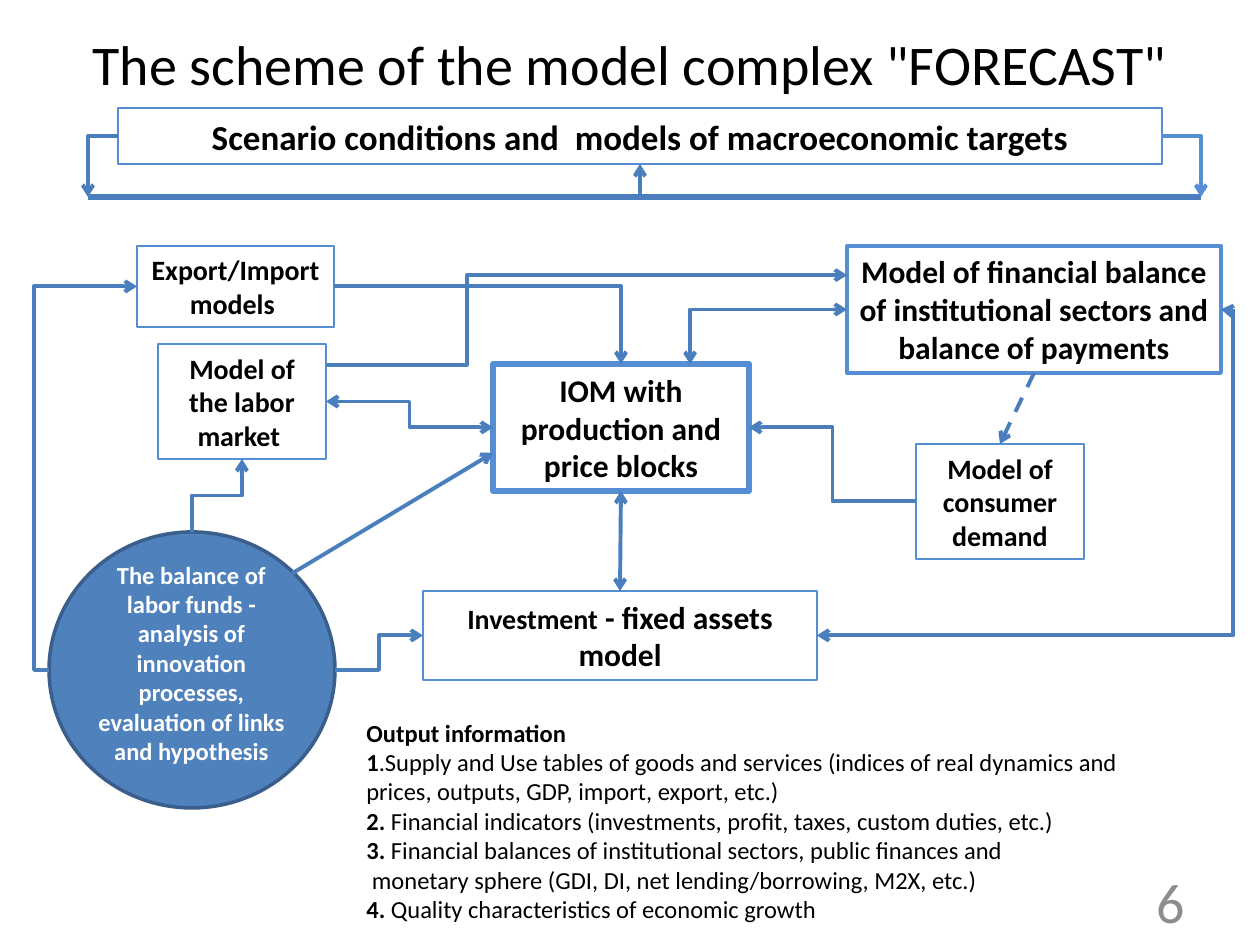
from dataclasses import dataclass

from lxml import etree
from pptx import Presentation
from pptx.dml.color import RGBColor
from pptx.enum.dml import MSO_LINE
from pptx.enum.shapes import MSO_CONNECTOR, MSO_SHAPE
from pptx.enum.text import MSO_ANCHOR, PP_ALIGN
from pptx.oxml.ns import qn
from pptx.util import Emu, Pt

PX = 914400 / 126
STRAIGHT, ELBOW = MSO_CONNECTOR.STRAIGHT, MSO_CONNECTOR.ELBOW
RECT, OVAL = MSO_SHAPE.RECTANGLE, MSO_SHAPE.OVAL
TOP, MIDDLE = MSO_ANCHOR.TOP, MSO_ANCHOR.MIDDLE
LEFT, CENTER, RIGHT = PP_ALIGN.LEFT, PP_ALIGN.CENTER, PP_ALIGN.RIGHT
DASH = MSO_LINE.DASH


@dataclass(frozen=True)
class Theme:
    font: str = "Calibri"
    ink: str = "000000"
    light: str = "FFFFFF"
    frame: str = "558ED5"
    link: str = "4B7EBC"
    hub: str = "4F81BD"
    hub_edge: str = "3A5F8C"
    muted: str = "8C8C8C"
    title: int = 32
    banner: int = 20
    core: int = 18
    node: int = 16
    note: int = 14


THEME = Theme()


def px(value):
    return Emu(round(value * PX))


def within(region, box):
    """Turn a box relative to its region into slide px."""
    return region[0] + box[0], region[1] + box[1], box[2], box[3]


def write(shape, paragraphs, size, color=THEME.ink, align=CENTER, anchor=MIDDLE):
    """Each paragraph is a list of (text, bold, size or None) runs."""
    frame = shape.text_frame
    for name, value in {"word_wrap": True, "vertical_anchor": anchor}.items():
        setattr(frame, name, value)
    for index, runs in enumerate(paragraphs):
        paragraph = frame.add_paragraph() if index else frame.paragraphs[0]
        paragraph.alignment = align
        for text, bold, own_size in runs:
            run = paragraph.add_run()
            run.text = text
            look = {"name": THEME.font, "size": Pt(own_size or size), "bold": bold}
            for name, value in look.items():
                setattr(run.font, name, value)
            run.font.color.rgb = RGBColor.from_string(color)


def add_text(slide, box, paragraphs, size, **look):
    write(slide.shapes.add_textbox(*map(px, box)), paragraphs, size, **look)


def add_block(slide, box, edge, width, kind=RECT, fill=None):
    block = slide.shapes.add_shape(kind, *map(px, box))
    block.shadow.inherit = False
    if fill:
        block.fill.solid()
        block.fill.fore_color.rgb = RGBColor.from_string(fill)
    else:
        block.fill.background()
    block.line.color.rgb = RGBColor.from_string(edge)
    block.line.width = Pt(width)
    return block


def add_link(slide, start, end, route="straight", bend=None, ends="tail",
             color=THEME.link, width=2.25, dash=None):
    """Routes: straight, corner (across, down), step (across, down, across), rise."""
    (x1, y1), (x2, y2) = start, end
    if route == "rise":  # a step turned a quarter to the left
        cx, cy, half_w, half_h = (x1 + x2) / 2, (y1 + y2) / 2, (y1 - y2) / 2, (x2 - x1) / 2
        x1, y1, x2, y2 = cx - half_w, cy - half_h, cx + half_w, cy + half_h
    kind = STRAIGHT if route == "straight" else ELBOW
    link = slide.shapes.add_connector(kind, *map(px, (x1, y1, x2, y2)))
    properties = link._element.spPr
    if route == "rise":
        properties.find(qn("a:xfrm")).set("rot", str(270 * 60000))
    geometry = properties.find(qn("a:prstGeom"))
    if route == "corner":
        geometry.set("prst", "bentConnector2")
    if bend is not None:
        guides = geometry.find(qn("a:avLst"))
        if guides is None:
            guides = etree.SubElement(geometry, qn("a:avLst"))
        etree.SubElement(guides, qn("a:gd"), name="adj1", fmla=f"val {round(bend * 100000)}")
    link.line.color.rgb = RGBColor.from_string(color)
    link.line.width = Pt(width)
    if dash:
        link.line.dash_style = dash
    outline = properties.find(qn("a:ln"))
    for tag in ("head", "tail"):
        if tag in ends:
            etree.SubElement(outline, qn(f"a:{tag}End"), type="arrow")
    etree.SubElement(properties, qn("a:effectLst"))


def build_targets(slide, region):
    """Banner of targets with the return line below it."""
    x, y, width, height = region
    bar_left, bar_right, bar_height = x + 30, x + width - 39, 56
    bar = add_block(slide, (bar_left, y, bar_right - bar_left, bar_height), THEME.frame, 1.5)
    write(bar, [[("Scenario conditions and  models of macroeconomic targets", True, None)]],
          THEME.banner)
    base, middle = y + height, y + bar_height / 2
    add_link(slide, (x, base), (x + width, base), ends="", width=3)
    add_link(slide, (bar_left, middle), (x, base), "corner")
    add_link(slide, (bar_right, middle), (x + width, base), "corner", color=THEME.frame)
    add_link(slide, (x + 552, base), (x + 552, y + bar_height))


def build_models(slide, region):
    """Models, the labor balance hub and the links between them."""
    boxes = {
        "hub": (15, 286, 286, 276),
        "trade": (103, 0, 197, 81),
        "labor": (124, 98, 168, 115),
        "finance": (813, 0, 374, 127),
        "consumer": (882, 198, 168, 115),
        "iom": (459, 118, 256, 127),
        "invest": (389, 345, 394, 89),
    }
    boxes = {name: within(region, box) for name, box in boxes.items()}

    # Hub
    add_block(slide, boxes["hub"], THEME.hub_edge, 2, OVAL, THEME.hub)
    add_text(slide, within(region, (44, 306, 227, 221)),
             [[("The balance of labor funds - analysis of innovation processes, "
                "evaluation of links and hypothesis", True, None)]],
             THEME.note, color=THEME.light)

    # Models: name, line width, type size, anchor, runs
    models = [
        ("trade", 1.5, THEME.node, MIDDLE, [("Export/Import models ", True, None)]),
        ("labor", 1.5, THEME.node, MIDDLE, [("Model of the labor market ", True, None)]),
        ("finance", 2.25, THEME.core, TOP,
         [("Model of financial balance of institutional sectors and balance of payments",
           True, None)]),
        ("consumer", 1.5, THEME.node, MIDDLE, [("Model of consumer demand", True, None)]),
        ("iom", 3, THEME.core, MIDDLE, [("IOM with production and price blocks", True, None)]),
        ("invest", 1.5, THEME.core, MIDDLE,
         [("Investment", True, THEME.node), (" - fixed assets model", True, None)]),
    ]
    for name, width, size, anchor, runs in models:
        block = add_block(slide, boxes[name], THEME.frame, width)
        write(block, [runs], size, anchor=anchor)

    # Links: each end is a model and a share of its width and height
    def spot(name, across, down):
        x, y, width, height = boxes[name]
        return x + across * width, y + down * height

    both = "head tail"
    links = [
        (("hub", 0, 0.5), ("trade", 0, 0.5), {"route": "step", "bend": -0.17}),
        (("trade", 1, 0.5), ("iom", 0.5, 0), {"route": "corner"}),
        (("hub", 0.5, 0), ("labor", 0.5, 1), {"route": "rise"}),
        (("labor", 1, 0.5), ("iom", 0, 0.5), {"route": "step", "ends": both}),
        (("hub", 1, 0.5), ("invest", 0, 0.5), {"route": "step"}),
        (("consumer", 0, 0.5), ("iom", 1, 0.5), {"route": "step"}),
        (("labor", 1, 0.18), ("finance", 0, 0.23), {"route": "step", "bend": 0.27}),
        (("hub", 0.85, 0.15), ("iom", 0, 0.7), {}),
        (("iom", 0.5, 1), ("invest", 0.5, 0), {"ends": both}),
        (("invest", 1, 0.5), ("finance", 1, 0.5),
         {"route": "step", "bend": 1.03, "ends": both}),
        (("finance", 0.5, 1), ("consumer", 0.5, 0), {"dash": DASH}),
        (("finance", 0, 0.5), ("iom", 0.77, 0), {"route": "corner", "ends": both}),
    ]
    for start, end, look in links:
        add_link(slide, spot(*start), spot(*end), **look)


def build_output(slide, region):
    """List of what the models give out."""
    items = [
        ("Output information", ""),
        ("1", ".Supply and Use tables of goods and services (indices of real dynamics and "
              "prices, outputs, GDP, import, export, etc.)"),
        ("2.", " Financial indicators (investments, profit, taxes, custom duties, etc.)"),
        ("3.", " Financial balances of institutional sectors, public finances and"),
        ("", " monetary sphere (GDI, DI, net lending/borrowing, M2X, etc.)"),
        ("4.", " Quality characteristics of economic growth"),
    ]
    paragraphs = [[(text, bold, None) for text, bold in ((lead, True), (rest, False)) if text]
                  for lead, rest in items]
    add_text(slide, region, paragraphs, THEME.note, align=LEFT)


def main():
    deck = Presentation()
    deck.slide_width, deck.slide_height = px(1260), px(945)
    slide = deck.slides.add_slide(deck.slide_layouts[6])
    add_text(slide, (63, 38, 1134, 50),
             [[('The scheme of the model complex "FORECAST"', False, None)]], THEME.title)
    build_targets(slide, (88, 108, 1113, 89))
    build_models(slide, (34, 246, 1200, 562))
    build_output(slide, (354, 710, 847, 221))
    add_text(slide, (903, 876, 294, 50), [[("6", False, None)]], THEME.title,
             color=THEME.muted, align=RIGHT)
    deck.save("out.pptx")


if __name__ == "__main__":
    main()
